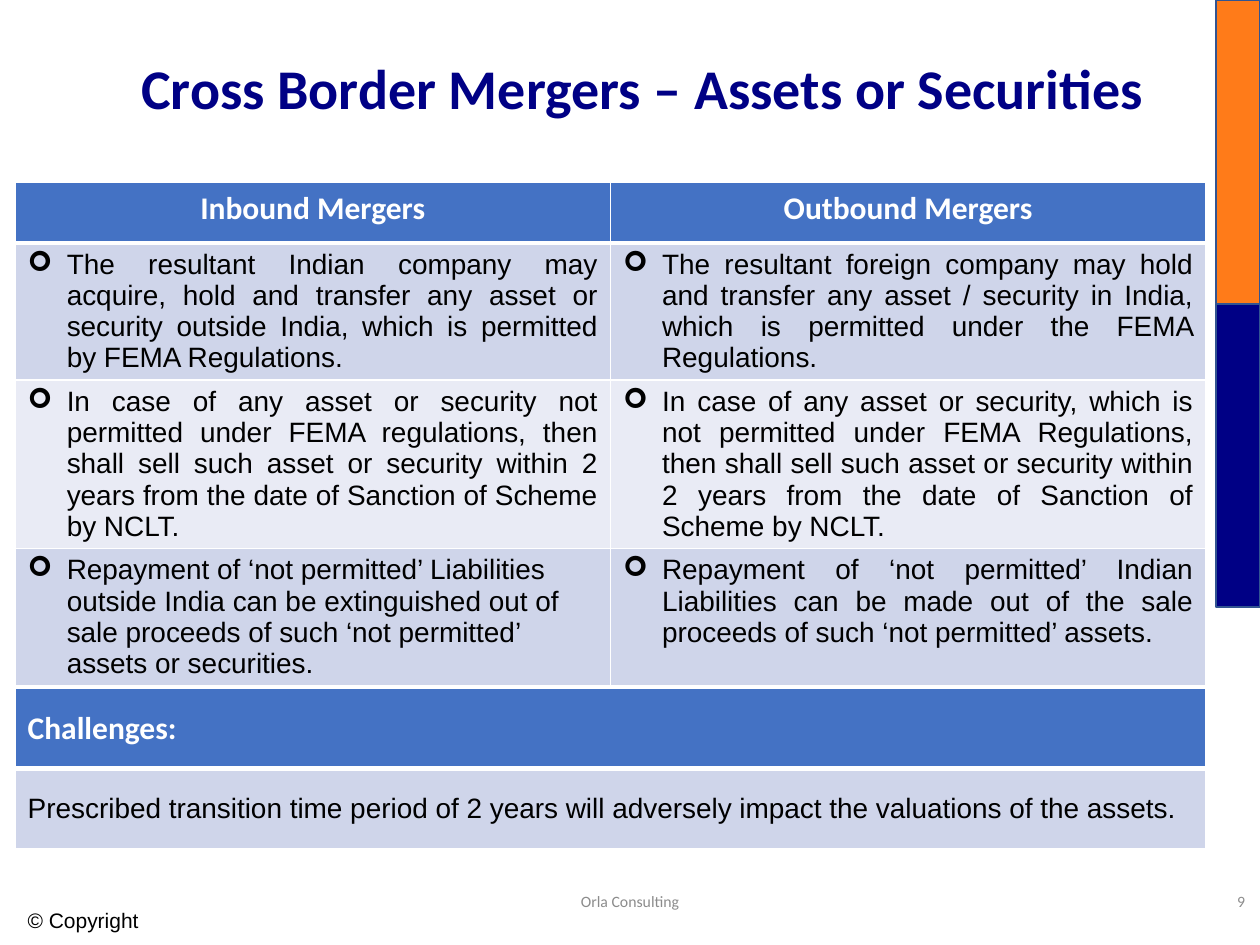
"""Build the slide on assets and securities in cross border mergers."""
from lxml import etree
from pptx import Presentation
from pptx.dml.color import RGBColor
from pptx.enum.shapes import MSO_SHAPE
from pptx.enum.text import MSO_ANCHOR, PP_ALIGN
from pptx.oxml.ns import qn
from pptx.util import Inches, Pt

RECTANGLE = MSO_SHAPE.RECTANGLE
TOP, MIDDLE = MSO_ANCHOR.TOP, MSO_ANCHOR.MIDDLE
LEFT, CENTER, RIGHT, JUSTIFY = PP_ALIGN.LEFT, PP_ALIGN.CENTER, PP_ALIGN.RIGHT, PP_ALIGN.JUSTIFY

THEME = {
    "title": ("Calibri", 32, "000085", True),
    "header": ("Calibri", 18, "FFFFFF", True),
    "body": ("Arial", 16, "000000", False),
    "footer": ("Calibri", 9, "8C8C8C", False),
    "copyright": ("Arial", 12, "000000", False),
    "header_fill": "4472C4",
    "band_fills": ("CFD5EA", "E9EBF5"),
    "border": "FFFFFF",
    "bars": ("FF7B19", "000085"),
    "bar_line": "325491",
}

TITLE = "Cross Border Mergers – Assets or Securities"
COMPARISON = [
    ("Inbound Mergers", "Outbound Mergers"),
    ("The resultant Indian company may acquire, hold and transfer any asset or security "
     "outside India, which is permitted by FEMA Regulations.",
     "The resultant foreign company may hold and transfer any asset / security in India, "
     "which is permitted under the FEMA Regulations."),
    ("In case of any asset or security not permitted under FEMA regulations, then shall sell "
     "such asset or security within 2 years from the date of Sanction of Scheme by NCLT.",
     "In case of any asset or security, which is not permitted under FEMA Regulations, then "
     "shall sell such asset or security within 2 years from the date of Sanction of Scheme by NCLT."),
    ("Repayment of ‘not permitted’ Liabilities outside India can be extinguished out of sale "
     "proceeds of such ‘not permitted’ assets or securities.",
     "Repayment of ‘not permitted’ Indian Liabilities can be made out of the sale proceeds of "
     "such ‘not permitted’ assets."),
]
CHALLENGES = [
    ("Challenges:",),
    ("Prescribed transition time period of 2 years will adversely impact the valuations of the assets.",),
]
LEFT_ALIGNED_CELL = (3, 0)
FOOTERS = [
    ("9", (7.73, 6.95, 2.25, 0.4), "footer", RIGHT),
    ("Orla Consulting", (3.31, 6.95, 3.38, 0.4), "footer", CENTER),
    ("© Copyright", (0.12, 7.1, 1.65, 0.4), "copyright", LEFT),
]
TABLE_LEFT, TABLE_WIDTH = 0.12, 9.45
BAR_LEFT, BAR_WIDTH, BAR_HEIGHT = 9.65, 0.35, 2.41
BULLET_INDENT = Inches(0.31)


def write(frame, text, style, alignment, anchor=MIDDLE, bullet=False):
    frame.word_wrap = True
    frame.vertical_anchor = anchor
    paragraph = frame.paragraphs[0]
    paragraph.alignment = alignment
    if bullet:
        add_bullet(paragraph)
    run = paragraph.add_run()
    run.text = text
    name, size, color, bold = THEME[style]
    run.font.name = name
    run.font.size = Pt(size)
    run.font.bold = bold
    run.font.color.rgb = RGBColor.from_string(color)
    return paragraph


def add_bullet(paragraph):
    properties = paragraph._p.get_or_add_pPr()
    properties.set("marL", str(BULLET_INDENT))
    properties.set("indent", str(-BULLET_INDENT))
    etree.SubElement(properties, qn("a:buFont"), typeface="Wingdings")
    etree.SubElement(properties, qn("a:buChar"), char="➢")


def add_borders(cell, bottom_width):
    properties = cell._tc.get_or_add_tcPr()
    for side, width in (("L", 1), ("R", 1), ("T", 1), ("B", bottom_width)):
        line = etree.SubElement(properties, qn(f"a:ln{side}"), w=str(Pt(width)))
        fill = etree.SubElement(line, qn("a:solidFill"))
        etree.SubElement(fill, qn("a:srgbClr"), val=THEME["border"])


def add_table(slide, rows, top, heights, header_alignment, anchor, bullet):
    columns = len(rows[0])
    table = slide.shapes.add_table(len(rows), columns, Inches(TABLE_LEFT), Inches(top),
                                   Inches(TABLE_WIDTH), Inches(sum(heights))).table
    for row, height in zip(table.rows, heights):
        row.height = Inches(height)
    for row_index, texts in enumerate(rows):
        header = row_index == 0
        color = THEME["header_fill"] if header else THEME["band_fills"][(row_index - 1) % 2]
        for column_index, text in enumerate(texts):
            cell = table.cell(row_index, column_index)
            add_borders(cell, 3 if header else 1)
            cell.fill.solid()
            cell.fill.fore_color.rgb = RGBColor.from_string(color)
            cell.vertical_anchor = anchor
            left_aligned = bullet and (row_index, column_index) == LEFT_ALIGNED_CELL
            alignment = header_alignment if header else LEFT if left_aligned else JUSTIFY
            write(cell.text_frame, text, "header" if header else "body", alignment, anchor,
                  bullet and not header)


def add_bars(slide):
    for index, color in enumerate(THEME["bars"]):
        bar = slide.shapes.add_shape(RECTANGLE, Inches(BAR_LEFT), Inches(index * BAR_HEIGHT),
                                     Inches(BAR_WIDTH), Inches(BAR_HEIGHT))
        bar.shadow.inherit = False
        bar.fill.solid()
        bar.fill.fore_color.rgb = RGBColor.from_string(color)
        bar.line.color.rgb = RGBColor.from_string(THEME["bar_line"])
        bar.line.width = Pt(1)


def main():
    presentation = Presentation()
    presentation.slide_width, presentation.slide_height = Inches(10), Inches(7.5)
    slide = presentation.slides.add_slide(presentation.slide_layouts[5])
    add_bars(slide)
    title = slide.shapes.title
    title.left, title.top, title.width, title.height = map(Inches, (1.02, 0, 8.62, 1.45))
    write(title.text_frame, TITLE, "title", LEFT).line_spacing = 0.9
    add_table(slide, COMPARISON, 1.45, (0.48, 1.08, 1.33, 1.09), CENTER, TOP, True)
    add_table(slide, CHALLENGES, 5.46, (0.64, 0.64), LEFT, MIDDLE, False)
    for text, box, style, alignment in FOOTERS:
        footer = slide.shapes.add_textbox(*map(Inches, box))
        write(footer.text_frame, text, style, alignment)
    presentation.save("out.pptx")


if __name__ == "__main__":
    main()
